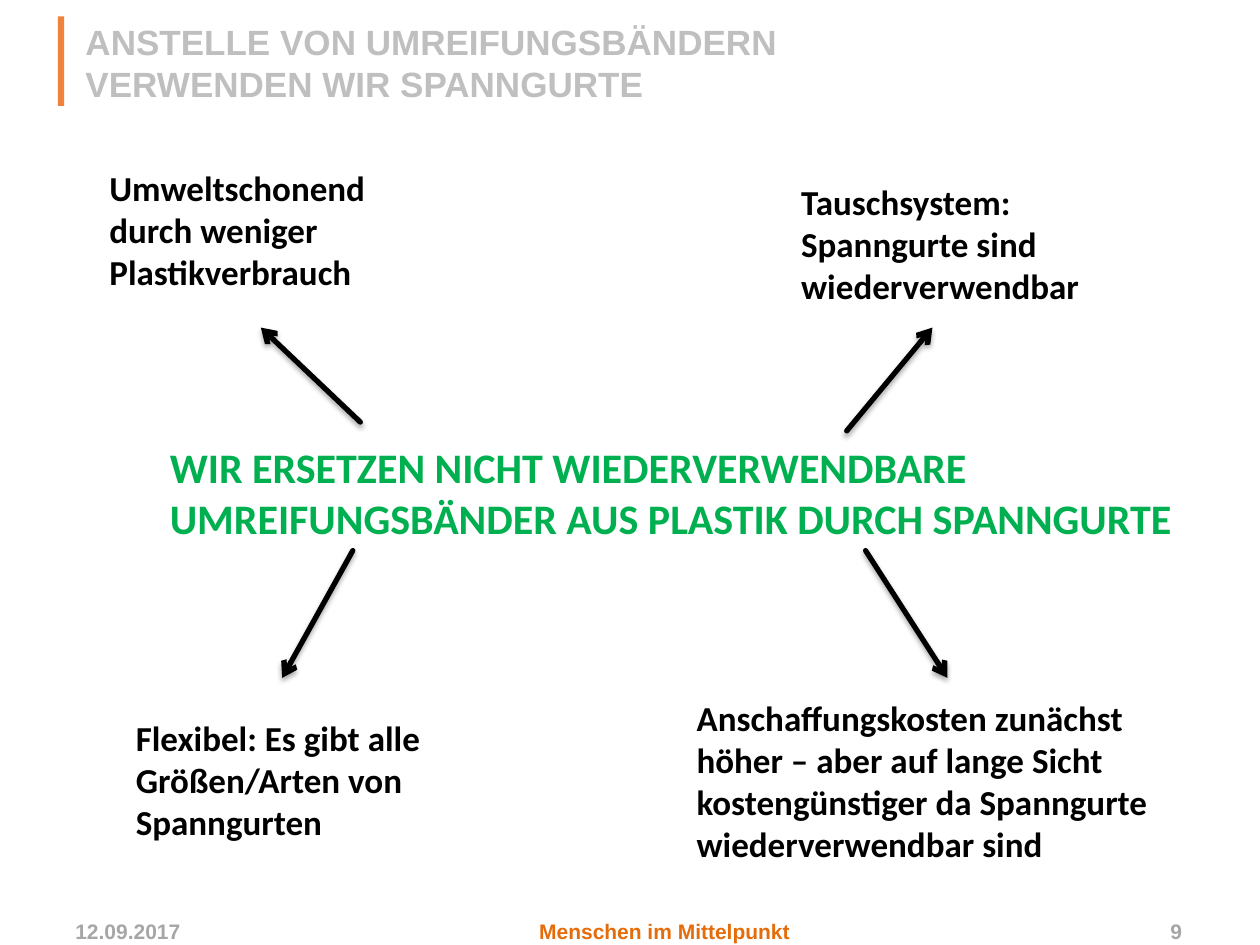
from lxml import etree
from pptx import Presentation
from pptx import util as u
from pptx.dml.color import RGBColor
from pptx.enum import shapes, text
from pptx.oxml import parse_xml
from pptx.oxml.ns import nsdecls, qn

ORANGE = RGBColor(0xF0, 0x82, 0x3C)
DARK_ORANGE = RGBColor(0xE4, 0x6C, 0x0A)
LIGHT_GREY = RGBColor(0xBF, 0xBF, 0xBF)
GREY = RGBColor(0xA6, 0xA6, 0xA6)
GREEN = RGBColor(0x00, 0xB0, 0x50)
BLACK = RGBColor(0, 0, 0)

LEFT, CENTER, RIGHT = text.PP_ALIGN.LEFT, text.PP_ALIGN.CENTER, text.PP_ALIGN.RIGHT
TOP, MIDDLE = text.MSO_ANCHOR.TOP, text.MSO_ANCHOR.MIDDLE

SHADOW = (
    f'<a:effectLst {nsdecls("a")}>'
    f'<a:outerShdw blurRad="{u.Pt(3.1)}" dist="{u.Pt(1.8)}" dir="5400000" rotWithShape="0">'
    '<a:srgbClr val="000000"><a:alpha val="35000"/></a:srgbClr>'
    '</a:outerShdw></a:effectLst>'
)


class SlideBuilder:
    """Holds the current slide and the style shared by its elements."""

    body = {"name": "Calibri", "size": u.Pt(20), "bold": True}
    title = {**body, "name": "Arial"}
    claim = {**body, "size": u.Pt(24)}
    footer = {**title, "size": u.Pt(12)}

    def __init__(self, slide):
        self.slide = slide

    def bar(self, box, color):
        bar = self.slide.shapes.add_shape(
            shapes.MSO_SHAPE.RECTANGLE, *map(u.Inches, box))
        bar.shadow.inherit = False
        bar.fill.solid()
        bar.fill.fore_color.rgb = color
        bar.line.fill.background()

    def label(self, box, words, style, color=BLACK, anchor=MIDDLE, align=LEFT):
        frame = self.slide.shapes.add_textbox(*map(u.Inches, box)).text_frame
        frame.word_wrap = True
        frame.vertical_anchor = anchor
        paragraph = frame.paragraphs[0]
        paragraph.alignment = align
        run = paragraph.add_run()
        run.text = words
        for attribute, value in style.items():
            setattr(run.font, attribute, value)
        run.font.color.rgb = color

    def arrow(self, start, end):
        """Draw a round-capped arrow with a soft shadow; the head is at the end."""
        arrow = self.slide.shapes.add_connector(
            shapes.MSO_CONNECTOR.STRAIGHT, *map(u.Inches, start + end))
        arrow.line.width = u.Pt(3)
        arrow.line.color.rgb = BLACK
        outline = arrow.line._get_or_add_ln()
        outline.set("cap", "rnd")
        etree.SubElement(outline, qn("a:tailEnd")).set("type", "arrow")
        arrow._element.spPr.append(parse_xml(SHADOW))


def main():
    deck = Presentation()
    deck.slide_width, deck.slide_height = u.Inches(10), u.Inches(7.5)
    page = SlideBuilder(deck.slides.add_slide(deck.slide_layouts[6]))

    page.bar((0.46, 0.13, 0.05, 0.71), ORANGE)
    page.label((0.58, -0.01, 6.61, 1.01),
               "ANSTELLE VON UMREIFUNGSBÄNDERN VERWENDEN WIR SPANNGURTE",
               page.title, LIGHT_GREY)
    page.label((1.25, 3.1, 8.5, 1.61),
               "WIR ERSETZEN NICHT WIEDERVERWENDBARE "
               "UMREIFUNGSBÄNDER AUS PLASTIK DURCH SPANNGURTE",
               page.claim, GREEN)

    # Each advantage: text box, text, arrow start near the claim, arrow head
    advantages = [
        ((0.77, 1.27, 2.6, 1.11),
         "Umweltschonend durch weniger Plastikverbrauch",
         (2.86, 3.35), (2.07, 2.6)),
        ((6.26, 1.38, 2.52, 1.11),
         "Tauschsystem: Spanngurte sind wiederverwendbar",
         (6.72, 3.42), (7.4, 2.6)),
        ((0.98, 5.64, 2.83, 1.11),
         "Flexibel: Es gibt alle Größen/Arten von Spanngurten",
         (2.8, 4.37), (2.24, 5.38)),
        ((5.43, 5.48, 3.81, 0.76),
         "Anschaffungskosten zunächst höher – aber auf lange Sicht "
         "kostengünstiger da Spanngurte wiederverwendbar sind",
         (6.87, 4.37), (7.52, 5.38)),
    ]
    for box, words, start, end in advantages:
        page.label(box, words, page.body, anchor=TOP)
        page.arrow(start, end)

    left = 0.5
    for width, words, color, align in [
        (1.43, "12.09.2017", GREY, LEFT),
        (6.69, "Menschen im Mittelpunkt", DARK_ORANGE, CENTER),
        (0.86, "9", GREY, RIGHT),
    ]:
        page.label((left, 7.28, width, 0.22), words, page.footer, color, align=align)
        left += width

    deck.save("out.pptx")


if __name__ == "__main__":
    main()
